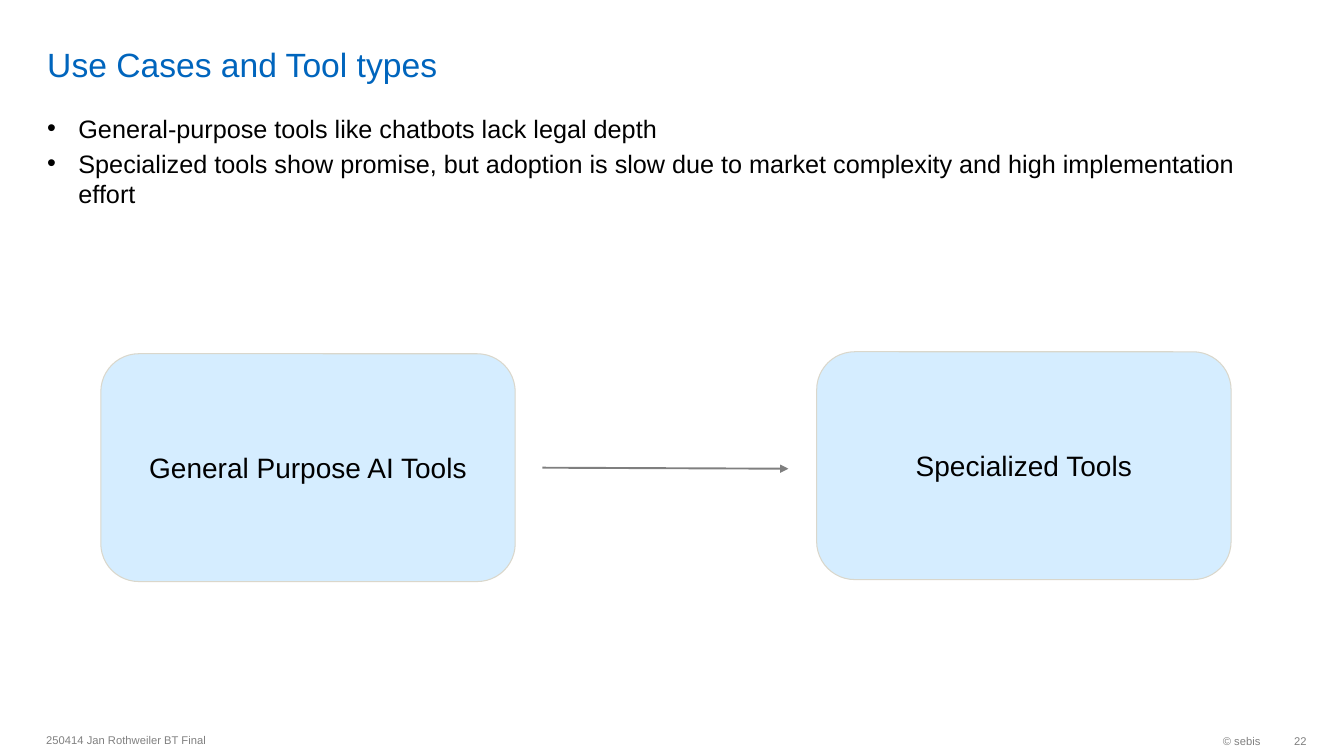
import pptx
import pptx.dml.color
import pptx.enum.shapes
import pptx.enum.text
import pptx.oxml.ns
import pptx.util
from lxml import etree

Inches = pptx.util.Inches
Pt = pptx.util.Pt
ALIGN = pptx.enum.text.PP_ALIGN
ANCHOR = pptx.enum.text.MSO_ANCHOR
qn = pptx.oxml.ns.qn


def color(value):
    """Return an RGB colour from a hex string."""
    return pptx.dml.color.RGBColor.from_string(value)


def add_bullet(p, indent):
    """Give a paragraph a round bullet with a hanging indent."""
    pPr = p._p.get_or_add_pPr()
    pPr.set("marL", str(Inches(indent)))
    pPr.set("indent", str(-Inches(indent)))
    etree.SubElement(pPr, qn("a:buFont"), typeface="Arial")
    etree.SubElement(pPr, qn("a:buChar"), char="•")


def write(tf, text, size=8, fill="808080", align=ALIGN.LEFT, anchor=ANCHOR.MIDDLE,
          margins=(0.1, 0.05, 0.1, 0.05), bullet=False, gap=0):
    """Fill a text frame with one formatted paragraph per line of text."""
    tf.word_wrap = True
    tf.vertical_anchor = anchor
    tf.margin_left, tf.margin_top, tf.margin_right, tf.margin_bottom = map(Inches, margins)
    for i, line in enumerate(text.split("\n")):
        p = tf.add_paragraph() if i else tf.paragraphs[0]
        if bullet:
            add_bullet(p, 0.31)
        p.alignment = align
        p.space_before = Pt(gap if i else 0)
        r = p.add_run()
        r.text = line
        r.font.name = "Arial"
        r.font.size = Pt(size)
        r.font.color.rgb = color(fill)


def add_text(s, box, text, **fmt):
    """Add a text box."""
    sp = s.shapes.add_textbox(*map(Inches, box))
    write(sp.text_frame, text, **fmt)


def add_card(s, left, top, text):
    """Add a rounded box with a centred label."""
    sp = s.shapes.add_shape(pptx.enum.shapes.MSO_SHAPE.ROUNDED_RECTANGLE,
                            *map(Inches, (left, top, 4.11, 2.26)))
    sp.shadow.inherit = False
    sp.fill.solid()
    sp.fill.fore_color.rgb = color("D5EDFF")
    sp.line.color.rgb = color("DAD7CB")
    sp.line.width = Pt(0.75)
    write(sp.text_frame, text, size=20, fill="000000", align=ALIGN.CENTER)


def add_arrow(s, start, end):
    """Add a half-transparent black arrow."""
    sp = s.shapes.add_connector(pptx.enum.shapes.MSO_CONNECTOR.STRAIGHT,
                                *map(Inches, start + end))
    sp.line.color.rgb = color("000000")
    sp.line.width = Pt(1.35)
    ln = sp.line._get_or_add_ln()
    etree.SubElement(ln.find(".//" + qn("a:srgbClr")), qn("a:alpha"), val="50000")
    etree.SubElement(ln, qn("a:tailEnd"), type="triangle")
    etree.SubElement(sp._element.spPr, qn("a:effectLst"))


def main():
    """Build the slide and save it."""
    prs = pptx.Presentation()
    prs.slide_width, prs.slide_height = Inches(13.33), Inches(7.5)
    s = prs.slides.add_slide(prs.slide_layouts[6])

    add_text(s, (0.37, 0.05, 11.58, 0.79), "Use Cases and Tool types",
             size=24, fill="0065BD", anchor=ANCHOR.BOTTOM, margins=(0.1, 0, 0.1, 0))
    add_text(s, (0.37, 1.07, 12.6, 5.91),
             "General-purpose tools like chatbots lack legal depth\n"
             "Specialized tools show promise, but adoption is slow due to market "
             "complexity and high implementation effort",
             size=18, fill="000000", anchor=ANCHOR.TOP, bullet=True, gap=3.6)

    add_card(s, 1, 3.51, "General Purpose AI Tools")
    add_arrow(s, (5.38, 4.64), (7.82, 4.65))
    add_card(s, 8.1, 3.49, "Specialized Tools")

    add_text(s, (0.36, 7.18, 6.3, 0.32), "250414 Jan Rothweiler BT Final")
    add_text(s, (10.26, 7.19, 2.34, 0.32), "© sebis", align=ALIGN.RIGHT)
    add_text(s, (12.6, 7.19, 0.36, 0.32), "22", align=ALIGN.RIGHT,
             margins=(0.1, 0.05, 0, 0.05))
    prs.save("out.pptx")


if __name__ == "__main__":
    main()
